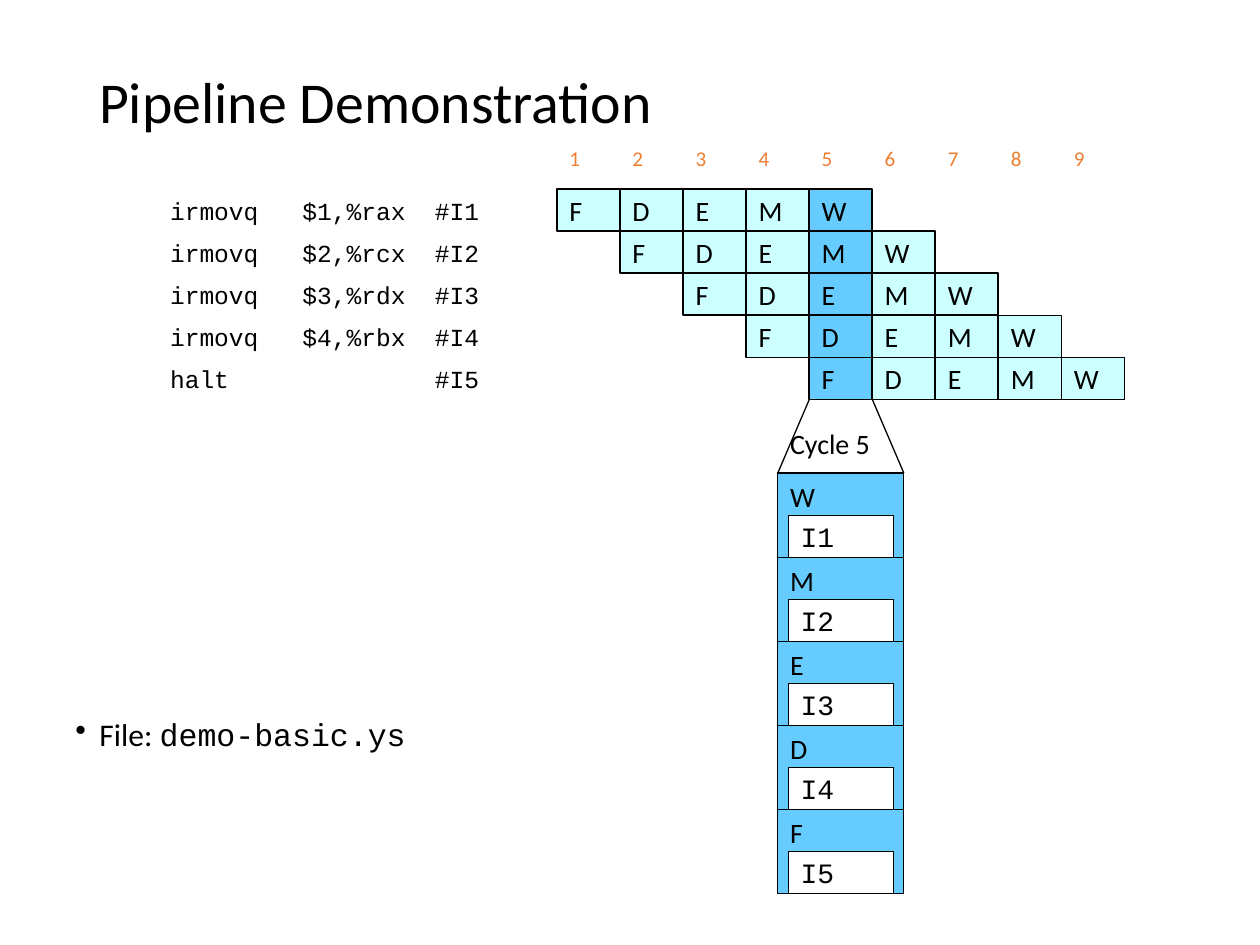
import lxml.etree
import pptx
import pptx.dml.color
import pptx.enum.shapes
import pptx.enum.text
import pptx.oxml.ns
import pptx.util

UNIT = 1 / 12  # grid step in inches; all boxes are (left, top, width, height) in steps
CYCLE, ROW = 6, 4
SANS, MONO = "Calibri", "Courier New"
BLACK, WHITE, ORANGE = "000000", "FFFFFF", "ED7D31"
PALE, BRIGHT = "CCFFFF", "66CCFF"
STAGES = "FDEMW"
PROGRAM = ["irmovq\t$1,%rax\t#I1", "irmovq\t$2,%rcx\t#I2", "irmovq\t$3,%rdx\t#I3",
           "irmovq\t$4,%rbx\t#I4", "halt\t\t#I5"]
SHOWN_CYCLE = 5
MIDDLE = pptx.enum.text.MSO_ANCHOR.MIDDLE
TOP = pptx.enum.text.MSO_ANCHOR.TOP


def steps(*counts):
    return [pptx.util.Inches(count * UNIT) for count in counts]


def color(value):
    return pptx.dml.color.RGBColor.from_string(value)


def add_xml(parent, tag, **attributes):
    return lxml.etree.SubElement(parent, pptx.oxml.ns.qn(tag), attributes)


def style_text(shape, size, font=SANS, ink=BLACK, anchor=MIDDLE):
    """Format the shape's first paragraph and return it."""
    shape.text_frame.word_wrap = True
    shape.text_frame.vertical_anchor = anchor
    paragraph = shape.text_frame.paragraphs[0]
    paragraph.alignment = pptx.enum.text.PP_ALIGN.LEFT
    paragraph.font.size = pptx.util.Pt(size)
    paragraph.font.name = font
    paragraph.font.color.rgb = color(ink)
    return paragraph


def add_label(slide, box, text, size, anchor=TOP):
    label = slide.shapes.add_textbox(*steps(*box))
    label.text_frame.text = text
    return style_text(label, size, anchor=anchor)


def add_cell(slide, box, text, size=16, fill=WHITE, border=None, **text_style):
    cell = slide.shapes.add_shape(pptx.enum.shapes.MSO_SHAPE.RECTANGLE, *steps(*box))
    cell.shadow.inherit = False
    cell.fill.solid()
    cell.fill.fore_color.rgb = color(fill)
    if border:
        cell.line.color.rgb = color(BLACK)
        cell.line.width = pptx.util.Pt(border)
    else:
        cell.line.fill.background()
    cell.text_frame.text = text
    return style_text(cell, size, **text_style)


def add_line(slide, start, end):
    line = slide.shapes.add_connector(
        pptx.enum.shapes.MSO_CONNECTOR.STRAIGHT, *steps(*start, *end))
    line.line.color.rgb = color(BLACK)
    line.line.width = pptx.util.Pt(0.75)
    add_xml(line._element.spPr, "a:effectLst")


def add_file_note(slide, box):
    note = add_label(slide, box, "", 18)
    note.line_spacing = 0.9
    note.space_before = pptx.util.Pt(7.5)
    for text, font in (("File: ", SANS), ("demo-basic.ys", MONO)):
        run = note.add_run()
        run.text = text
        run.font.name = font
    properties = note._p.get_or_add_pPr()
    indent = pptx.util.Inches(0.19)
    properties.set("marL", str(indent))
    properties.set("indent", str(-indent))
    bullet = add_xml(properties, "a:buChar", char="•")
    properties.find(pptx.oxml.ns.qn("a:defRPr")).addprevious(bullet)


def add_listing(slide, box):
    """Program lines, with operands and comments at tab stops."""
    left, top, width, _ = box
    for index, instruction in enumerate(PROGRAM):
        line = add_cell(slide, (left, top + index * ROW, width, ROW),
                        instruction, 14, font=MONO)
        properties = line._p.get_or_add_pPr()
        tabs = add_xml(properties, "a:tabLst")
        for stop in (1.05, 2.1):
            add_xml(tabs, "a:tab", pos=str(pptx.util.Inches(stop)), algn="l")
        properties.find(pptx.oxml.ns.qn("a:defRPr")).addprevious(tabs)


def add_pipeline(slide, box):
    """Cycle numbers above a staircase of stages, one row per instruction."""
    left, top, _, _ = box
    for cycle in range(len(PROGRAM) + len(STAGES) - 1):
        add_cell(slide, (left + cycle * CYCLE, top, CYCLE, ROW),
                 str(cycle + 1), 12, ink=ORANGE)
    first_row = top + ROW + 1
    for row in range(len(PROGRAM)):
        for cycle, stage in enumerate(STAGES, start=row):
            add_cell(slide, (left + cycle * CYCLE, first_row + row * ROW, CYCLE, ROW),
                     stage, fill=BRIGHT if cycle + 1 == SHOWN_CYCLE else PALE, border=1)


def add_cycle_detail(slide, box):
    """Enlarged view of one cycle, hung below its pipeline column."""
    left, top, width, height = box
    funnel = 7
    column = left + (width - CYCLE) / 2
    stack_top = top + funnel
    stage_height = (height - funnel) / len(STAGES)
    add_line(slide, (column, top), (left, stack_top))
    add_line(slide, (column + CYCLE, top), (left + width, stack_top))
    add_label(slide, (left, top + 2, width, 4.4), f"Cycle {SHOWN_CYCLE}", 16)
    for index, stage in enumerate(reversed(STAGES)):
        stage_top = stack_top + index * stage_height
        add_cell(slide, (left, stage_top, width, stage_height), stage,
                 fill=BRIGHT, border=0.75, anchor=TOP)
        add_cell(slide, (left + 1, stage_top + stage_height - ROW, width - 2, ROW),
                 f"I{index + 1}", border=0.75, font=MONO)


def main():
    deck = pptx.Presentation()
    deck.slide_width = pptx.util.Inches(9.99)
    deck.slide_height = pptx.util.Inches(7.49)
    slide = deck.slides.add_slide(deck.slide_layouts[6])
    title = add_label(slide, (8.25, 1.3, 103.3, 17.4), "Pipeline Demonstration", 33, MIDDLE)
    title.line_spacing = 0.9
    add_file_note(slide, (6, 67.8, 40, 7))
    add_listing(slide, (15, 18, 34, 20))
    add_pipeline(slide, (53, 13, 54, 25))
    add_cycle_detail(slide, (74, 38, 12, 47))
    deck.save("out.pptx")


if __name__ == "__main__":
    main()
